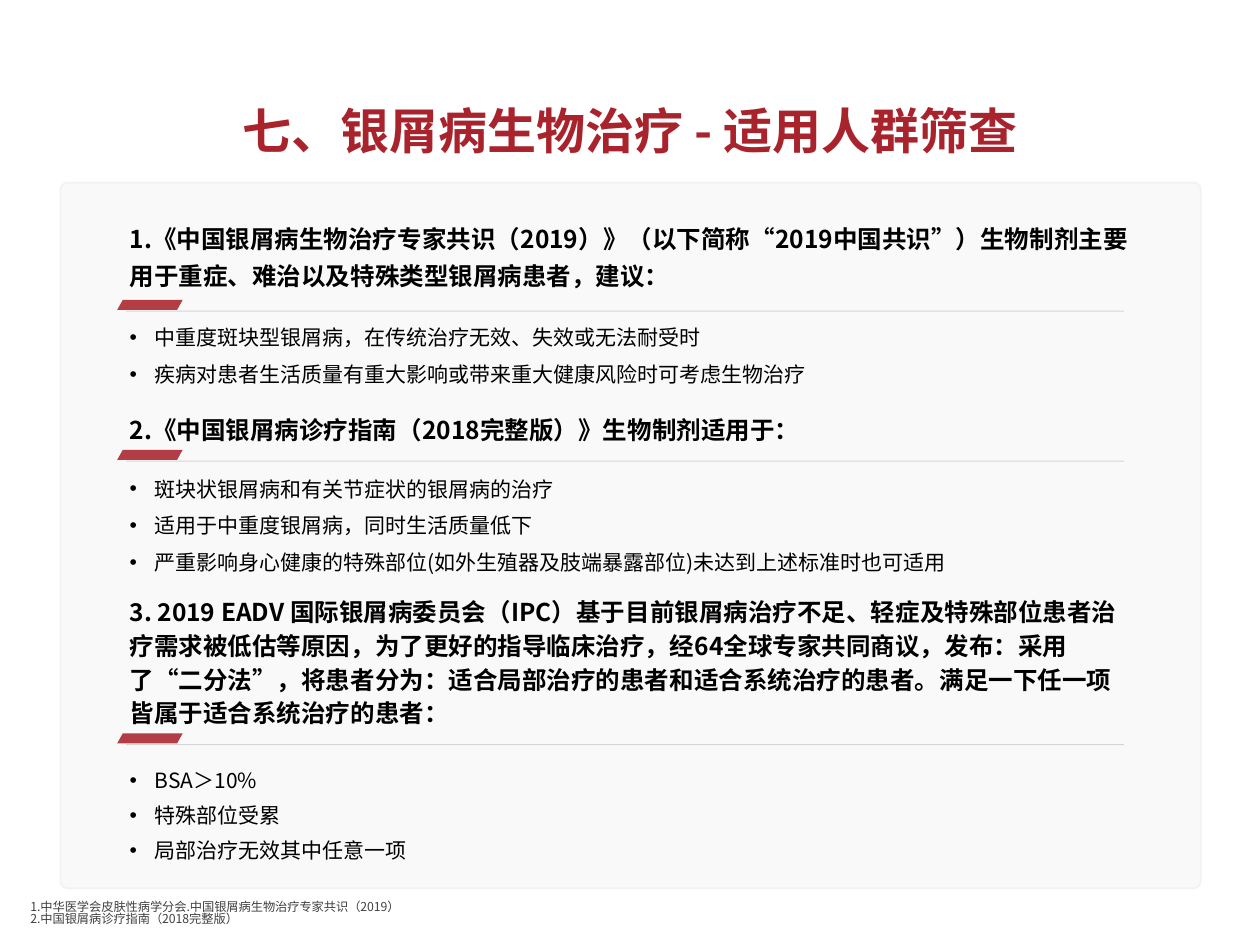
"""Build the slide on screening patients for biologic treatment of psoriasis."""
import pptx
import pptx.util
import pptx.dml.color
import pptx.enum.shapes
import pptx.enum.text
import pptx.oxml.ns
from lxml import etree

Inches, Pt = pptx.util.Inches, pptx.util.Pt
MSO_SHAPE = pptx.enum.shapes.MSO_SHAPE
PP_ALIGN, MSO_ANCHOR = pptx.enum.text.PP_ALIGN, pptx.enum.text.MSO_ANCHOR

TITLE = "七、银屑病生物治疗 - 适用人群筛查"
REFERENCES = [
    "1.中华医学会皮肤性病学分会.中国银屑病生物治疗专家共识（2019）",
    "2.中国银屑病诊疗指南（2018完整版）",
]
SECTIONS = [
    {
        "heading": "1.《中国银屑病生物治疗专家共识（2019）》（以下简称“2019中国共识”）生物制剂主要用于重症、难治以及特殊类型银屑病患者，建议：",
        "top": 1.67, "rule": 2.47, "list": 2.48, "height": 0.8, "spacing": 1.25, "gap": 3,
        "items": ["中重度斑块型银屑病，在传统治疗无效、失效或无法耐受时",
                  "疾病对患者生活质量有重大影响或带来重大健康风险时可考虑生物治疗"],
    },
    {
        "heading": "2.《中国银屑病诊疗指南（2018完整版）》生物制剂适用于：",
        "top": 3.19, "rule": 3.66, "list": 3.68, "height": 0.93, "spacing": 1.25, "gap": 3,
        "items": ["斑块状银屑病和有关节症状的银屑病的治疗",
                  "适用于中重度银屑病，同时生活质量低下",
                  "严重影响身心健康的特殊部位(如外生殖器及肢端暴露部位)未达到上述标准时也可适用"],
    },
    {
        "heading": "3. 2019 EADV 国际银屑病委员会（IPC）基于目前银屑病治疗不足、轻症及特殊部位患者治疗需求被低估等原因，为了更好的指导临床治疗，经64全球专家共同商议，发布：采用了“二分法”，将患者分为：适合局部治疗的患者和适合系统治疗的患者。满足一下任一项皆属于适合系统治疗的患者：",
        "top": 4.66, "rule": 5.91, "list": 5.99, "height": 0.96, "spacing": 1.14, "gap": 2,
        "items": ["BSA＞10%", "特殊部位受累", "局部治疗无效其中任意一项"],
    },
]
THEME = {
    "font": "Noto Sans CJK SC",
    "red": "A9232D", "text": "000000", "note": "404040",
    "panel": "F9F9F9", "border": "F2F2F2", "rule": "BFBFBF",
    "title": 28, "heading": 14, "body": 12, "reference": 7,
}
LEFT, WIDTH, TAB_HEIGHT = 0.93, 8.15, 0.08


def rgb(name):
    return pptx.dml.color.RGBColor.from_string(THEME[name])


def sub(parent, tag, **attrs):
    return etree.SubElement(parent, pptx.oxml.ns.qn(tag), **attrs)


def place(sp, left, top, width, height):
    sp.left, sp.top, sp.width, sp.height = map(Inches, (left, top, width, height))


def set_alpha(fill_owner, percent):
    color = next(fill_owner.iter(pptx.oxml.ns.qn("a:srgbClr")))
    sub(color, "a:alpha", val=str(percent * 1000))


def write(tf, lines, size, color="text", bold=False, spacing=1.0, gap=0,
          indent=0, bullet=None, align=PP_ALIGN.LEFT):
    tf.word_wrap = True
    tf.auto_size = pptx.enum.text.MSO_AUTO_SIZE.NONE
    for i, line in enumerate(lines):
        p = tf.paragraphs[0] if i == 0 else tf.add_paragraph()
        p.alignment, p.line_spacing = align, spacing
        p.space_before = Pt(gap if i else 0)
        p_pr = p._p.get_or_add_pPr()
        p_pr.set("marL", str(Inches(indent)))
        p_pr.set("indent", str(-Inches(indent)))
        if bullet:
            sub(p_pr, "a:buFont", typeface="Arial")
            sub(p_pr, "a:buChar", char=bullet)
        else:
            sub(p_pr, "a:buNone")
        r = p.add_run()
        r.text = line
        r.font.size, r.font.bold = Pt(THEME[size]), bold
        r.font.color.rgb = rgb(color)
        r.font.name = THEME["font"]
        sub(r._r.get_or_add_rPr(), "a:ea", typeface=THEME["font"])


def add_text(s, top, height, lines, size, **style):
    sp = s.shapes.add_textbox(Inches(LEFT), Inches(top), Inches(WIDTH), Inches(height))
    write(sp.text_frame, lines, size, **style)


def add_panel(s):
    sp = s.shapes.add_shape(MSO_SHAPE.ROUNDED_RECTANGLE, Inches(0.48), Inches(1.45),
                            Inches(9.05), Inches(5.6))
    sp.adjustments[0] = 0.01
    sp.shadow.inherit = False
    sp.fill.solid()
    sp.fill.fore_color.rgb = rgb("panel")
    sp.line.color.rgb = rgb("border")
    sp.line.width = Pt(1)


def add_divider(s, y):
    group = s.shapes.add_group_shape()
    tab = group.shapes.add_shape(MSO_SHAPE.PARALLELOGRAM, Inches(LEFT), Inches(y - TAB_HEIGHT - 0.01),
                                 Inches(0.52), Inches(TAB_HEIGHT))
    tab.adjustments[0] = 0.56
    tab.shadow.inherit = False
    tab.fill.solid()
    tab.fill.fore_color.rgb = rgb("red")
    set_alpha(tab._element.spPr, 88)
    tab.line.fill.background()
    rule = group.shapes.add_connector(pptx.enum.shapes.MSO_CONNECTOR.STRAIGHT, Inches(8.92),
                                      Inches(y), Inches(1), Inches(y))
    rule.line.color.rgb = rgb("rule")
    rule.line.width = Pt(0.5)
    set_alpha(rule._element.spPr, 61)
    sub(rule._element.spPr, "a:effectLst")


def add_section(s, section):
    add_text(s, section["list"], section["height"], section["items"], "body",
             spacing=1.25, gap=section["gap"], indent=0.2, bullet="•")
    add_divider(s, section["rule"])
    add_text(s, section["top"], section["rule"] - section["top"] - 0.1, [section["heading"]],
             "heading", bold=True, spacing=section["spacing"])


def main():
    prs = pptx.Presentation()
    prs.slide_width, prs.slide_height = Inches(10), Inches(7.5)
    s = prs.slides.add_slide(prs.slide_layouts[1])
    title, references = s.shapes.title, s.placeholders[1]
    place(title, 0.69, 0.68, 8.62, 0.76)
    title.text_frame.vertical_anchor = MSO_ANCHOR.MIDDLE
    write(title.text_frame, [TITLE], "title", color="red", bold=True, spacing=0.9,
          align=PP_ALIGN.CENTER)
    place(references, 0.14, 6.9, 9.38, 0.5)
    references.text_frame.vertical_anchor = MSO_ANCHOR.BOTTOM
    write(references.text_frame, REFERENCES, "reference", color="note", spacing=0.8, indent=0.25)
    add_panel(s)
    for section in SECTIONS:
        add_section(s, section)
    prs.save("out.pptx")


if __name__ == "__main__":
    main()
